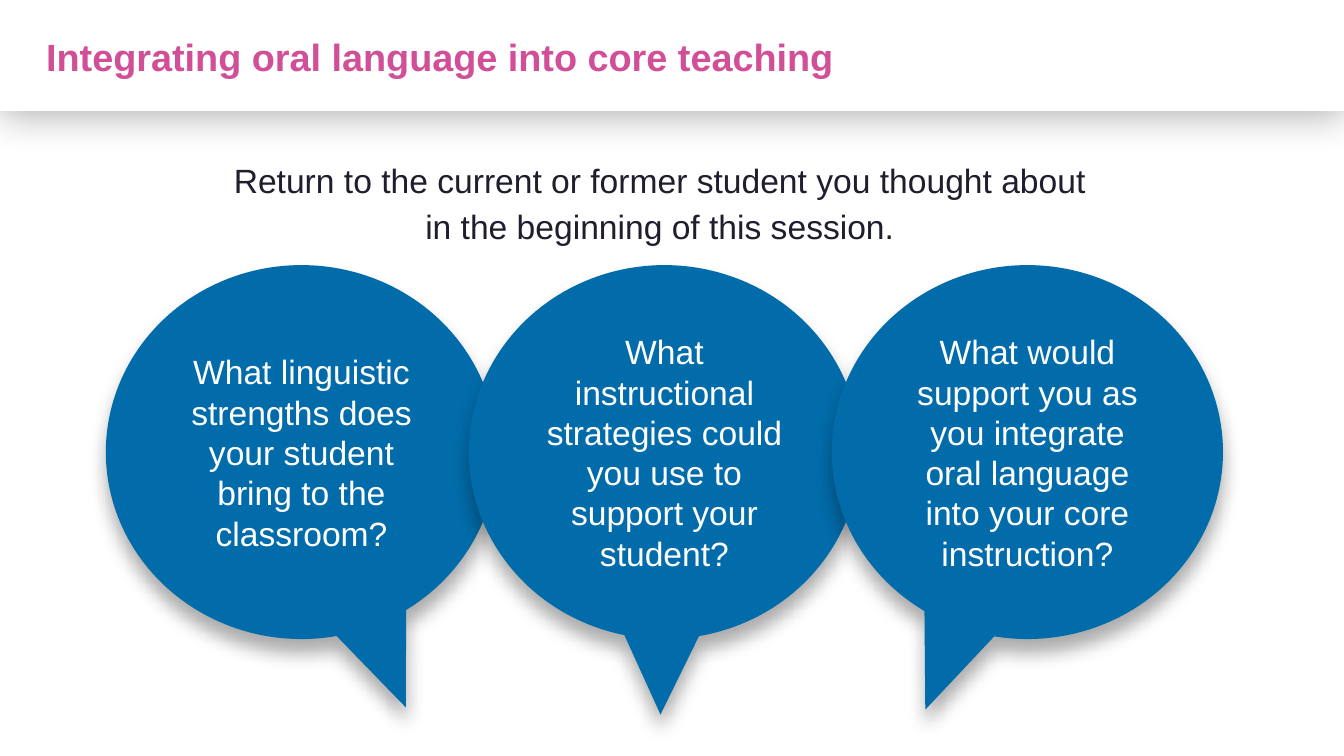
from dataclasses import dataclass
from lxml import etree
from pptx import Presentation
from pptx.dml.color import RGBColor
from pptx.enum.shapes import MSO_SHAPE
from pptx.enum.text import MSO_ANCHOR, PP_ALIGN
from pptx.oxml.ns import qn
from pptx.util import Inches, Pt

RECT = MSO_SHAPE.RECTANGLE
BUBBLE = MSO_SHAPE.OVAL_CALLOUT
TOP, MIDDLE = MSO_ANCHOR.TOP, MSO_ANCHOR.MIDDLE
LEFT, CENTER = PP_ALIGN.LEFT, PP_ALIGN.CENTER


@dataclass(frozen=True)
class Theme:
    font: str = "Arial"
    white: str = "FFFFFF"
    black: str = "000000"
    pink: str = "D14F97"
    ink: str = "1E1E2D"
    blue: str = "026CAA"
    title: int = 27
    body: int = 24


theme = Theme()


def paint(shape, color, alpha, blur, drop):
    shape.fill.solid()
    shape.fill.fore_color.rgb = RGBColor.from_string(color)
    shape.line.fill.background()
    shape.shadow.inherit = False
    effects = shape.element.spPr.find(qn("a:effectLst"))
    shadow = etree.SubElement(effects, qn("a:outerShdw"), blurRad=str(Pt(blur)),
                              dist=str(Pt(drop)), dir="5400000", algn="t", rotWithShape="0")
    tint = etree.SubElement(shadow, qn("a:srgbClr"), val=theme.black)
    etree.SubElement(tint, qn("a:alpha"), val=str(alpha * 1000))


def write(shape, lines, size, color, anchor, align, bold=False):
    frame = shape.text_frame
    frame.word_wrap = True
    frame.vertical_anchor = anchor
    para = frame.paragraphs[0]
    para.alignment = align
    for index, line in enumerate(lines):
        if index:
            para.add_line_break()
        run = para.add_run()
        run.text = line
        run.font.name = theme.font
        run.font.size = Pt(size)
        run.font.bold = bold
        run.font.color.rgb = RGBColor.from_string(color)
    return para


deck = Presentation()
deck.slide_width, deck.slide_height = Inches(13.33), Inches(7.5)
slide = deck.slides.add_slide(deck.slide_layouts[6])
shapes = slide.shapes

header = shapes.add_shape(RECT, 0, 0, deck.slide_width, Inches(1.1))
paint(header, theme.white, 30, 28, 3)

title = shapes.add_textbox(Inches(0.36), Inches(0.27), Inches(12.43), Inches(0.57))
write(title, ["Integrating oral language into core teaching"],
      theme.title, theme.pink, MIDDLE, LEFT, True)

intro = shapes.add_textbox(Inches(0.36), Inches(1.48), Inches(12.46), Inches(2.33))
para = write(intro, ["Return to the current or former student you thought about ",
                     "in the beginning of this session. "],
             theme.body, theme.ink, TOP, CENTER)
para.line_spacing = 1.14

prompts = [
    ("What linguistic strengths does your student bring to the classroom?", 0.267, 0.683),
    ("What instructional strategies could you use to support your student?", -0.01, 0.702),
    ("What would support you as you integrate oral language into your core instruction?",
     -0.261, 0.689),
]
for index, (prompt, tip_x, tip_y) in enumerate(prompts):
    bubble = shapes.add_shape(BUBBLE, Inches(1.05 + 3.6 * index), Inches(2.63),
                              Inches(3.88), Inches(3.71))
    bubble.adjustments[0] = tip_x
    bubble.adjustments[1] = tip_y
    paint(bubble, theme.blue, 32, 13, 10)
    write(bubble, [prompt], theme.body, theme.white, MIDDLE, CENTER)

deck.save("out.pptx")
